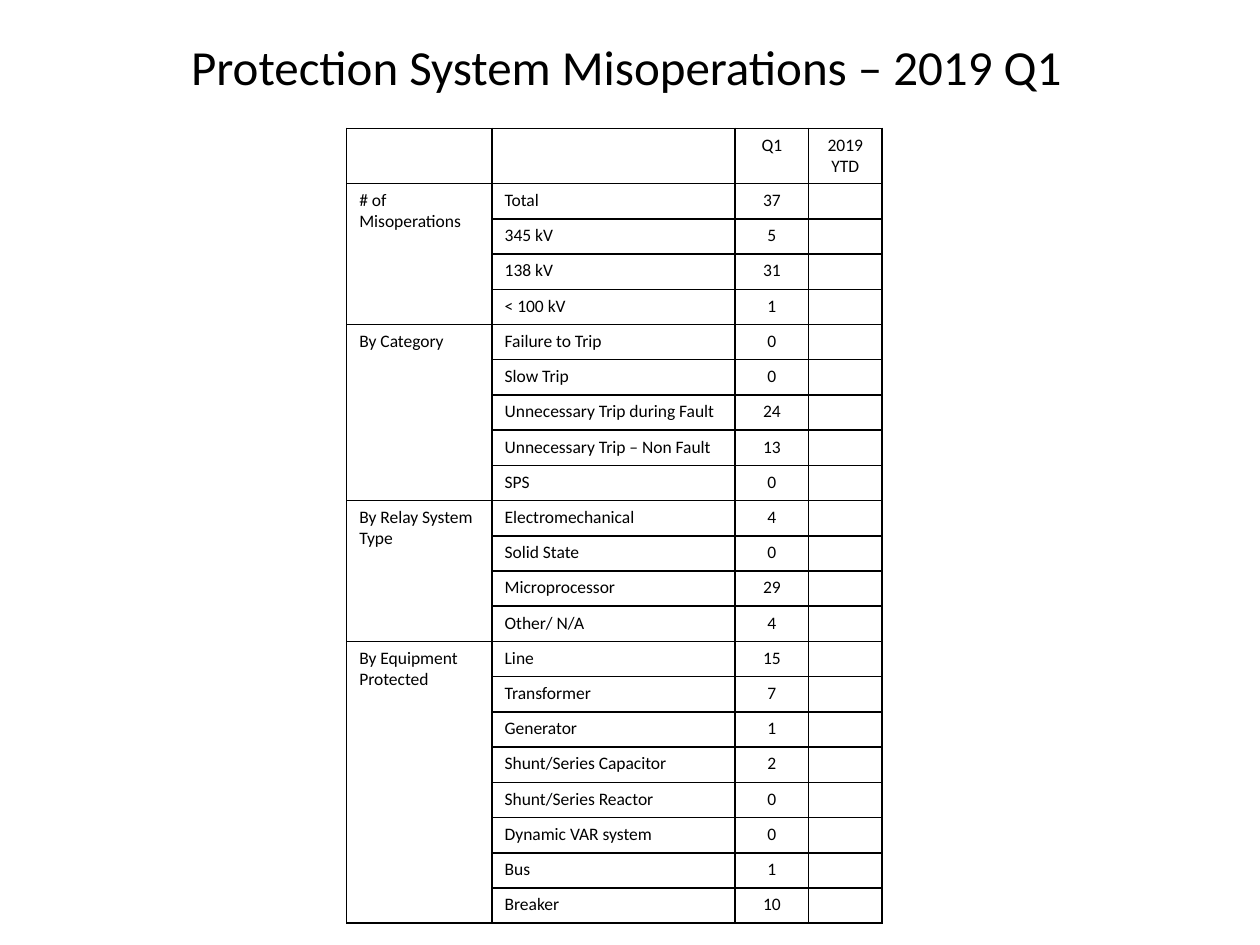
"""Build the slide on protection system misoperations in 2019 Q1."""
from dataclasses import dataclass

from lxml.etree import SubElement
from pptx import Presentation
from pptx.dml.color import RGBColor
from pptx.enum.text import MSO_ANCHOR, PP_ALIGN
from pptx.oxml.ns import qn
from pptx.util import Cm, Pt


@dataclass(frozen=True)
class Theme:
    font: str = "Calibri"
    ink: str = "000000"
    title: int = 28
    body: int = 10
    border: int = 1


THEME = Theme()
TITLE = "Protection System Misoperations – 2019 Q1"
HEADER = ("", "", "Q1", "2019 YTD")
COL_WIDTHS = (2.93, 4.9, 1.48, 1.48)
ROW_HEIGHT = 0.71
GROUPS = {
    "# of Misoperations": [
        ("Total", 37), ("345 kV", 5), ("138 kV", 31), ("< 100 kV", 1),
    ],
    "By Category": [
        ("Failure to Trip", 0), ("Slow Trip", 0),
        ("Unnecessary Trip during Fault", 24),
        ("Unnecessary Trip – Non Fault", 13), ("SPS", 0),
    ],
    "By Relay System Type": [
        ("Electromechanical", 4), ("Solid State", 0),
        ("Microprocessor", 29), ("Other/ N/A", 4),
    ],
    "By Equipment Protected": [
        ("Line", 15), ("Transformer", 7), ("Generator", 1),
        ("Shunt/Series Capacitor", 2), ("Shunt/Series Reactor", 0),
        ("Dynamic VAR system", 0), ("Bus", 1), ("Breaker", 10),
    ],
}


def write(tf, text, size=THEME.body, align=PP_ALIGN.LEFT, anchor=MSO_ANCHOR.TOP):
    """Write one formatted paragraph; an empty one keeps only its type size."""
    tf.word_wrap = True
    tf.vertical_anchor = anchor
    p = tf.paragraphs[0]
    p.alignment = align
    if not text:
        SubElement(p._p, qn("a:endParaRPr"), sz=str(size * 100))
        return
    r = p.add_run()
    r.text = text
    r.font.name = THEME.font
    r.font.size = Pt(size)
    r.font.bold = False
    r.font.color.rgb = RGBColor.from_string(THEME.ink)


def outline(cell):
    """Give a cell a clear fill and a border on each side."""
    cell.fill.background()
    tc_pr = cell._tc.get_or_add_tcPr()
    for i, side in enumerate(("lnL", "lnR", "lnT", "lnB")):
        ln = SubElement(tc_pr, qn(f"a:{side}"), w=str(Pt(THEME.border)))
        fill = SubElement(ln, qn("a:solidFill"))
        SubElement(fill, qn("a:srgbClr"), val=THEME.ink)
        tc_pr.insert(i, ln)


def add_title(s):
    """Fill the title placeholder and remove the unused subtitle."""
    sp = s.shapes.title
    sp.left, sp.top, sp.width, sp.height = Cm(1.07), Cm(0.05), Cm(23.11), Cm(2.54)
    write(sp.text_frame, TITLE, size=THEME.title, align=PP_ALIGN.CENTER,
          anchor=MSO_ANCHOR.MIDDLE)
    subtitle = s.placeholders[1].element
    subtitle.getparent().remove(subtitle)


def add_results(s):
    """Add the results table with one merged label for each group."""
    rows = [HEADER]
    spans = []
    for group, items in GROUPS.items():
        spans.append((len(rows), len(rows) + len(items) - 1))
        rows += [("" if i else group, name, str(count), "")
                 for i, (name, count) in enumerate(items)]
    table = s.shapes.add_table(
        len(rows), len(HEADER), Cm(6.99), Cm(2.59),
        Cm(sum(COL_WIDTHS)), Cm(ROW_HEIGHT * len(rows))).table
    table.first_row = table.horz_banding = False
    for col, width in zip(table.columns, COL_WIDTHS):
        col.width = Cm(width)
    for row, texts in zip(table.rows, rows):
        row.height = Cm(ROW_HEIGHT)
        for i, (cell, text) in enumerate(zip(row.cells, texts)):
            outline(cell)
            write(cell.text_frame, text,
                  align=PP_ALIGN.CENTER if i > 1 else PP_ALIGN.LEFT)
    for first, last in spans:
        table.cell(first, 0).merge(table.cell(last, 0))


def main():
    """Build and save the slide."""
    prs = Presentation()
    prs.slide_width, prs.slide_height = Cm(25.4), Cm(19.05)
    s = prs.slides.add_slide(prs.slide_layouts[0])
    add_results(s)
    add_title(s)
    prs.save("out.pptx")


if __name__ == "__main__":
    main()
